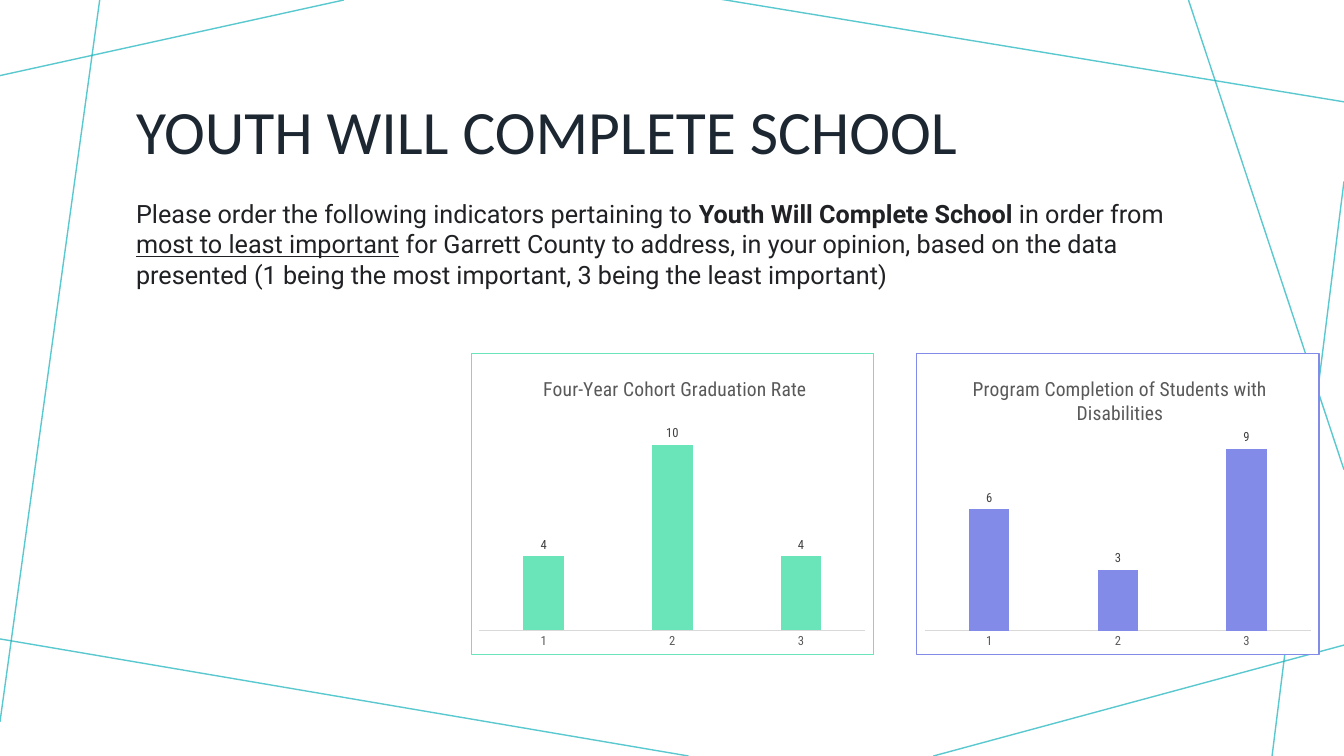
import lxml.etree
import pptx
import pptx.chart.data
import pptx.dml.color
import pptx.enum.chart
import pptx.enum.shapes
import pptx.enum.text
import pptx.oxml
import pptx.oxml.ns
import pptx.util

# The page is a grid of 100 columns by 100 rows
PAGE_WIDTH = pptx.util.Inches(13.333)
PAGE_HEIGHT = pptx.util.Inches(7.5)

COLORS = {
    "teal": "14B1BC",
    "title": "1C2732",
    "body": "202124",
    "green": "6AE4B9",
    "violet": "828CE8",
    "white": "FFFFFF",
    "axis_line": "D9D9D9",
    "axis_text": "595959",
    "label": "404040",
    "black": "000000",
}
CHART_FONT = "Roboto Condensed"

# Start and end of each background line, as column, row
BACKGROUND_LINES = [
    (25.58, 0, 0, 10),
    (7.42, 0, 0, 95.47),
    (51.23, 100, -0.38, 84.4),
    (100, 85.33, 69.45, 100),
    (100, 24, 94.65, 100),
    (100, 62.13, 88.43, 0),
    (100, 13.47, 53.55, -0.13),
]


def grid(*places):
    """Turn alternating columns and rows into lengths."""
    return [round(place * (PAGE_HEIGHT if index % 2 else PAGE_WIDTH) / 100)
            for index, place in enumerate(places)]


def rgb(name):
    return pptx.dml.color.RGBColor.from_string(COLORS[name])


def format_font(font, size, color, name=CHART_FONT, bold=False, underline=False):
    font.size = pptx.util.Pt(size)
    font.color.rgb = rgb(color)
    font.name = name
    font.bold = bold
    font.underline = underline


def add_span(para, text, **style):
    span = para.add_run()
    span.text = text
    format_font(span.font, **style)


def add_text_box(page, place, anchor):
    """Add a wrapping text box and return its paragraph."""
    frame = page.shapes.add_textbox(*grid(*place)).text_frame
    frame.word_wrap = True
    frame.vertical_anchor = anchor
    return frame.paragraphs[0]


def add_background_line(page, ends):
    line = page.shapes.add_connector(
        pptx.enum.shapes.MSO_CONNECTOR.STRAIGHT, *grid(*ends))
    line.line.color.rgb = rgb("teal")
    line.line.width = pptx.util.Pt(1)
    properties = line.element.spPr
    color = properties.find(".//" + pptx.oxml.ns.qn("a:srgbClr"))
    alpha = lxml.etree.SubElement(color, pptx.oxml.ns.qn("a:alpha"))
    alpha.set("val", "70000")
    lxml.etree.SubElement(properties, pptx.oxml.ns.qn("a:effectLst"))


def set_layout(parent, index, **shares):
    """Fix a chart part at shares of the chart's size."""
    for old in parent.findall(pptx.oxml.ns.qn("c:layout")):
        parent.remove(old)
    modes = {"xMode": "edge", "yMode": "edge"}
    if "w" in shares:
        modes = {"layoutTarget": "inner", **modes}
    values = "".join(f'<c:{key} val="{value}"/>'
                     for key, value in {**modes, **shares}.items())
    parent.insert(index, pptx.oxml.parse_xml(
        f'<c:layout {pptx.oxml.ns.nsdecls("c")}>'
        f'<c:manualLayout>{values}</c:manualLayout></c:layout>'))


def set_chart_frame(chart, color):
    chart_node = chart.element.find(pptx.oxml.ns.qn("c:chart"))
    chart_node.addnext(pptx.oxml.parse_xml(
        f'<c:spPr {pptx.oxml.ns.nsdecls("c", "a")}>'
        f'<a:solidFill><a:srgbClr val="{COLORS["white"]}"/></a:solidFill>'
        f'<a:ln w="9525"><a:solidFill><a:srgbClr val="{COLORS[color]}"/>'
        '</a:solidFill></a:ln></c:spPr>'))
    return chart_node


def add_ranking_chart(page, column, title, values, color, top, maximum, title_left):
    data = pptx.chart.data.CategoryChartData()
    data.categories = ["1", "2", "3"]
    data.add_series("Series 1", values)
    chart = page.shapes.add_chart(
        pptx.enum.chart.XL_CHART_TYPE.COLUMN_CLUSTERED,
        *grid(column, 46.67, 30, 40), data).chart
    chart.has_legend = False
    format_font(chart.font, 10, "black")
    chart_node = set_chart_frame(chart, color)

    # Title and plot position
    chart.has_title = True
    add_span(chart.chart_title.text_frame.paragraphs[0], title,
             size=14, color="axis_text")
    set_layout(chart.chart_title.element, 1, x=title_left, y=0.06)
    set_layout(chart_node.find(pptx.oxml.ns.qn("c:plotArea")), 0,
               x=0.02, y=top, w=0.96, h=round(0.92 - top, 2))

    # Axes
    no_tick = pptx.enum.chart.XL_TICK_MARK.NONE
    axis = chart.category_axis
    axis.major_tick_mark = no_tick
    axis.minor_tick_mark = no_tick
    axis.format.line.color.rgb = rgb("axis_line")
    axis.format.line.width = pptx.util.Pt(0.75)
    format_font(axis.tick_labels.font, 9, "axis_text")
    chart.value_axis.visible = False
    chart.value_axis.has_major_gridlines = False
    chart.value_axis.minimum_scale = 0
    chart.value_axis.maximum_scale = maximum

    # Columns and their labels
    plot = chart.plots[0]
    plot.gap_width = 219
    plot.overlap = -27
    plot.vary_by_categories = False
    series = plot.series[0]
    series.format.fill.solid()
    series.format.fill.fore_color.rgb = rgb(color)
    labels = series.data_labels
    labels.show_value = True
    labels.position = pptx.enum.chart.XL_LABEL_POSITION.OUTSIDE_END
    format_font(labels.font, 9, "label")


def main():
    deck = pptx.Presentation()
    deck.slide_width = PAGE_WIDTH
    deck.slide_height = PAGE_HEIGHT
    page = deck.slides.add_slide(deck.slide_layouts[6])

    # Background
    for ends in BACKGROUND_LINES:
        add_background_line(page, ends)

    # Title
    para = add_text_box(page, (9.38, 7.73, 81.23, 20.13),
                        pptx.enum.text.MSO_ANCHOR.MIDDLE)
    para.line_spacing = 0.9
    add_span(para, "YOUTH WILL COMPLETE SCHOOL",
             size=44, color="title", name="Calibri")

    # Instructions
    para = add_text_box(page, (9.38, 25.6, 81.23, 13.87),
                        pptx.enum.text.MSO_ANCHOR.TOP)
    para.space_before = pptx.util.Pt(10)
    for text, style in [
        ("Please order the following indicators pertaining to ", {}),
        ("Youth Will Complete School ", {"bold": True}),
        ("in order from ", {}),
        ("most to least important", {"underline": True}),
        (" for Garrett County to address, in your opinion, based on the data "
         "presented (1 being the most important, 3 being the least important)", {}),
    ]:
        add_span(para, text, size=18, color="body", name="Roboto", **style)

    # Charts
    add_ranking_chart(page, 35.03, "Four-Year Cohort Graduation Rate",
                      (4, 10, 4), "green", top=0.18, maximum=12, title_left=0.17)
    add_ranking_chart(page, 68.18, "Program Completion of Students with Disabilities",
                      (6, 3, 9), "violet", top=0.25, maximum=10, title_left=0.13)

    deck.save("out.pptx")


if __name__ == "__main__":
    main()
